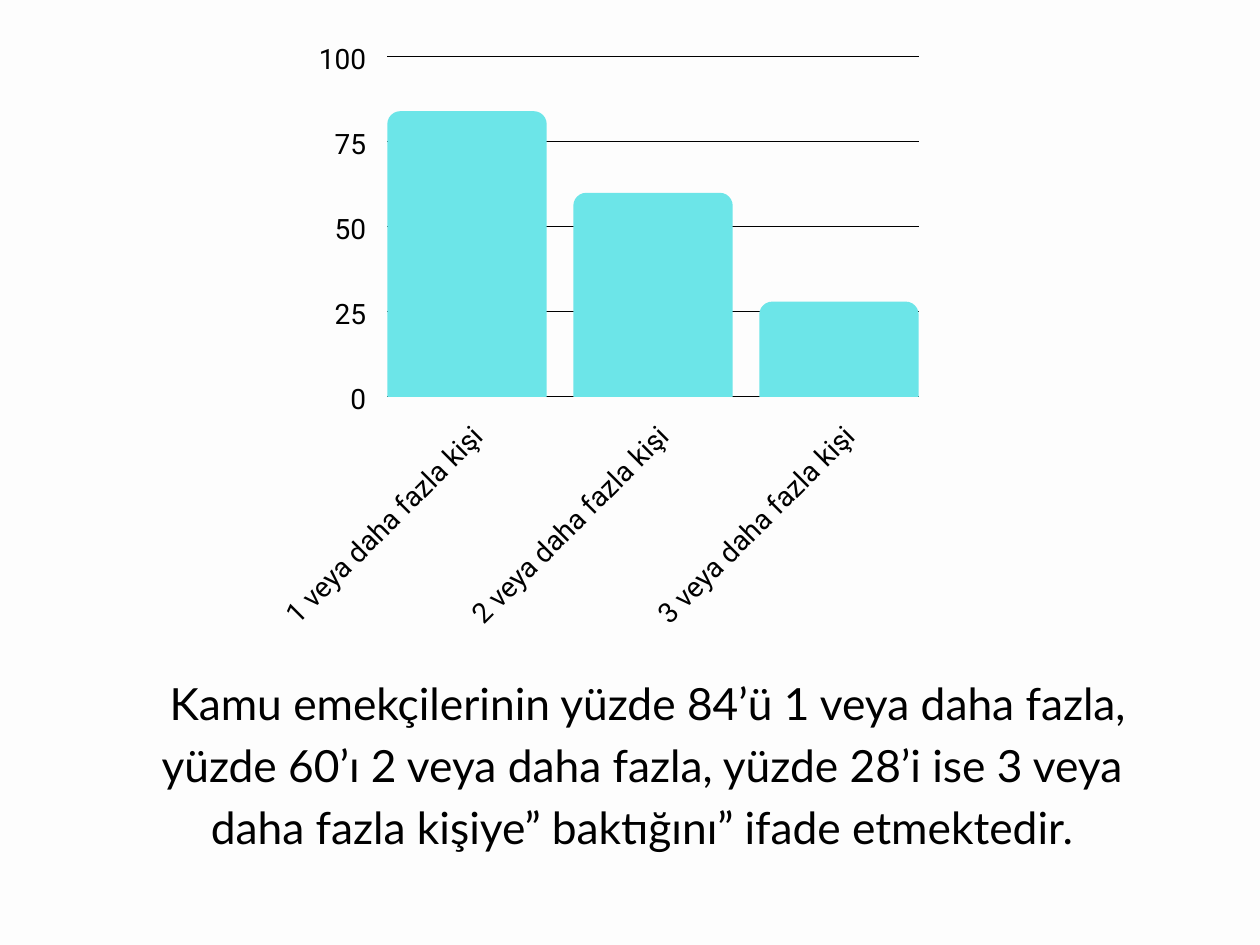
import pptx
import pptx.dml.color
import pptx.enum.shapes
import pptx.enum.text
import pptx.oxml.ns
import pptx.util
from lxml import etree
from pptx.util import Inches

COLOURS = {"page": "FDFDFD", "ink": "000000", "bar": "6CE5E8"}
SHARES = {
    "1 veya daha fazla kişi": 84,
    "2 veya daha fazla kişi": 60,
    "3 veya daha fazla kişi": 28,
}
CAPTION = (
    " Kamu emekçilerinin yüzde 84’ü 1 veya daha fazla, yüzde 60’ı 2 veya "
    "daha fazla, yüzde 28’i ise 3 veya daha fazla kişiye” baktığını” "
    "ifade etmektedir."
)
ALIGN = pptx.enum.text.PP_ALIGN
LABEL = {"name": "Roboto", "size": pptx.util.Pt(17.1)}
BODY = {"name": "Lato", "size": pptx.util.Pt(27)}
NO_MARGINS = {
    "word_wrap": True,
    "margin_left": 0,
    "margin_right": 0,
    "margin_top": 0,
    "margin_bottom": 0,
}


def colour(name):
    return pptx.dml.color.RGBColor.from_string(COLOURS[name])


def apply_format(target, values):
    for name, value in values.items():
        setattr(target, name, value)


def add_text(page, box, text, font, alignment, spacing):
    holder = page.shapes.add_textbox(*(Inches(length) for length in box))
    apply_format(holder.text_frame, NO_MARGINS)
    para = holder.text_frame.paragraphs[0]
    apply_format(
        para, {"alignment": alignment, "line_spacing": pptx.util.Pt(spacing)}
    )
    span = para.add_run()
    span.text = text
    apply_format(span.font, font)
    span.font.color.rgb = colour("ink")
    return holder


def add_scale(page, box):
    left, top, width, height = box
    for value in range(0, 101, 25):
        level = top + height * (1 - value / 100)
        rule = page.shapes.add_connector(
            pptx.enum.shapes.MSO_CONNECTOR.STRAIGHT,
            Inches(left), Inches(level), Inches(left + width), Inches(level),
        )
        rule.line.color.rgb = colour("ink")
        rule.line.width = pptx.util.Pt(0.75)
        etree.SubElement(rule._element.spPr, pptx.oxml.ns.qn("a:effectLst"))
        label_box = (left - 0.65, level - 0.18, 0.47, 0.31)
        add_text(page, label_box, str(value), LABEL, ALIGN.RIGHT, 23.9)


def add_bars(page, box):
    left, top, width, height = box
    bar_width, radius = 1.35, 0.11
    step = (width - bar_width) / (len(SHARES) - 1)
    for index, (name, share) in enumerate(SHARES.items()):
        bar_left = left + index * step
        bar_height = height * share / 100
        bar = page.shapes.add_shape(
            pptx.enum.shapes.MSO_SHAPE.ROUND_2_SAME_RECTANGLE,
            Inches(bar_left), Inches(top + height - bar_height),
            Inches(bar_width), Inches(bar_height),
        )
        bar.adjustments[0] = radius / min(bar_width, bar_height)
        bar.shadow.inherit = False
        bar.fill.solid()
        bar.fill.fore_color.rgb = colour("bar")
        bar.line.fill.background()

        label_box = (bar_left - 1.22, top + height + 0.9, 2.32, 0.31)
        label = add_text(page, label_box, name, LABEL, ALIGN.CENTER, 23.9)
        label.rotation = 315


def add_share_columns(page, box):
    add_scale(page, box)
    add_bars(page, box)


def add_caption(page, box):
    add_text(page, box, CAPTION, BODY, ALIGN.CENTER, 37.8)


def main():
    deck = pptx.Presentation()
    apply_format(deck, {"slide_width": Inches(10.67), "slide_height": Inches(8)})
    page = deck.slides.add_slide(deck.slide_layouts[6])
    page.background.fill.solid()
    page.background.fill.fore_color.rgb = colour("page")
    add_share_columns(page, box=(3.28, 0.48, 4.5, 2.88))
    add_caption(page, box=(1.01, 5.65, 8.85, 2.07))
    deck.save("out.pptx")


if __name__ == "__main__":
    main()
